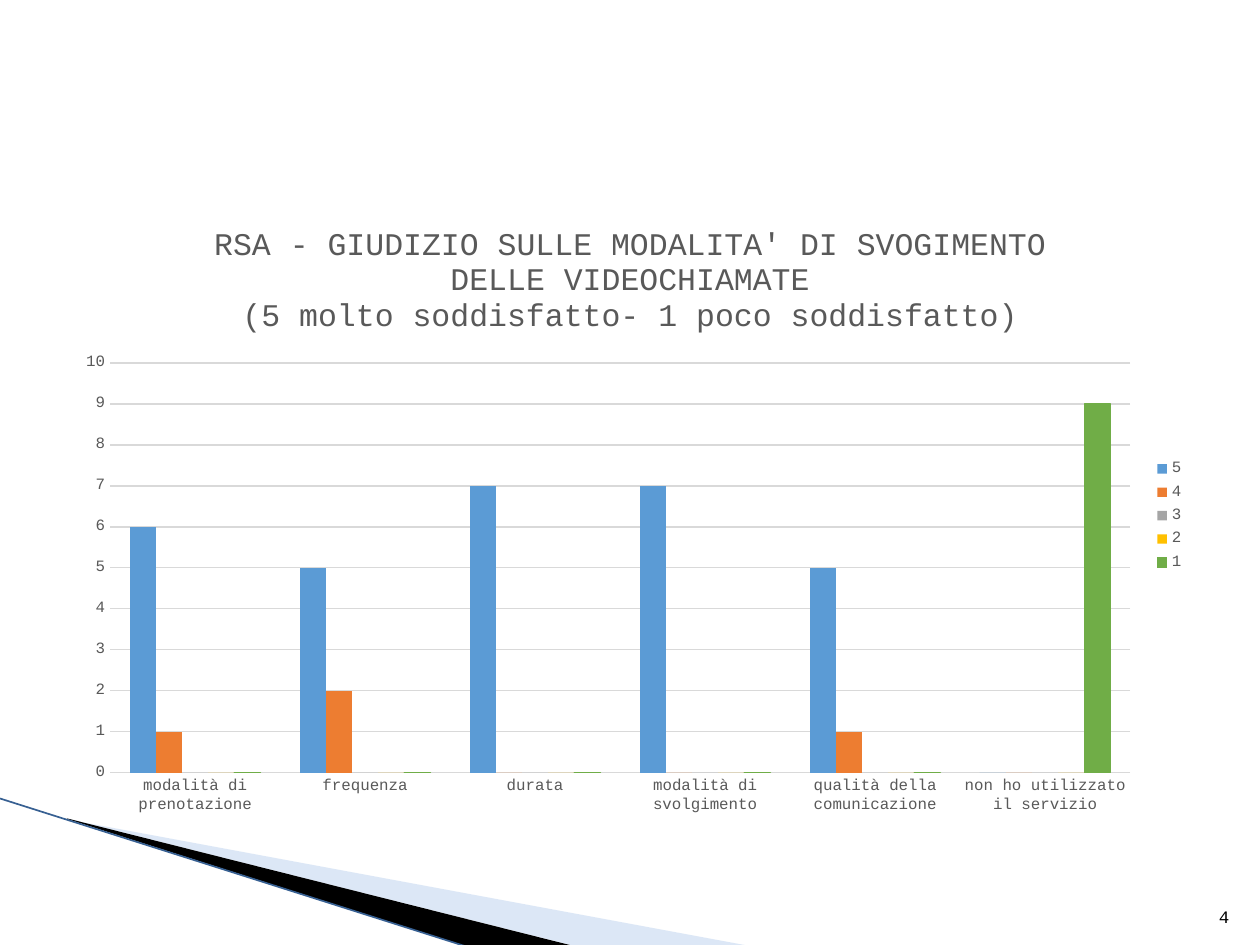
from dataclasses import dataclass

from lxml.etree import SubElement
from pptx import Presentation
from pptx.chart.data import CategoryChartData
from pptx.dml.color import RGBColor
from pptx.enum.chart import XL_CHART_TYPE as ChartType
from pptx.enum.chart import XL_LEGEND_POSITION as LegendPosition
from pptx.enum.chart import XL_TICK_MARK as TickMark
from pptx.enum.shapes import MSO_CONNECTOR as Connector
from pptx.enum.text import MSO_ANCHOR as Anchor
from pptx.enum.text import PP_ALIGN as Align
from pptx.oxml.ns import qn
from pptx.util import Cm, Pt


@dataclass(frozen=True)
class Theme:
    font: str = "Courier New"
    black: str = "000000"
    gray: str = "595959"
    grid: str = "D9D9D9"
    pale_blue: str = "A9C5E9"
    edge_blue: str = "376092"
    title_size: float = 18
    number_size: float = 10
    label_size: float = 9
    hairline: float = 0.75
    edge_width: float = 0.95


THEME = Theme()

WEDGE_GRID = (5760, 528)
PALE_WEDGE = [(-329, 347), (7156, 682), (5229, 682), (-328, 345)]
BLACK_WEDGE = [(817, 97), (6408, 682), (5232, 685), (829, 101)]

TITLE = [
    "RSA - GIUDIZIO SULLE MODALITA' DI SVOGIMENTO DELLE VIDEOCHIAMATE",
    "(5 molto soddisfatto- 1 poco soddisfatto)",
]
CATEGORIES = [
    "modalità di prenotazione",
    "frequenza",
    "durata",
    "modalità di svolgimento",
    "qualità della comunicazione",
    "non ho utilizzato il servizio",
]
RATINGS = [
    ("5", (6, 5, 7, 7, 5, 0), "5B9BD5"),
    ("4", (1, 2, 0, 0, 1, 0), "ED7D31"),
    ("3", (0, 0, 0, 0, 0, 0), "A5A5A5"),
    ("2", (0, 0, 0, 0, 0, 0), "FFC000"),
    ("1", (0, 0, 0, 0, 0, 9), "70AD47"),
]


def rgb(color):
    return RGBColor.from_string(color)


def style_font(font, size, color):
    font.name = THEME.font
    font.size = Pt(size)
    font.bold = False
    font.color.rgb = rgb(color)


def style_line(line, color, width):
    line.color.rgb = rgb(color)
    line.width = Pt(width)


def add_wedge(slide, frame, points, color, opacity=100):
    """Draw an outline on the wedge grid; its points may reach past the frame."""
    start, *rest = points
    builder = slide.shapes.build_freeform(*start)
    builder.add_line_segments(rest)
    shape = builder.convert_to_shape()
    shape.left, shape.top, shape.width, shape.height = (Cm(value) for value in frame)
    outline = shape._element.spPr.find(".//" + qn("a:path"))
    for name, value in zip("wh", WEDGE_GRID):
        outline.set(name, str(value))
    left, top = (min(values) for values in zip(*points))
    for point in outline.iter(qn("a:pt")):
        point.set("x", str(int(point.get("x")) + left))
        point.set("y", str(int(point.get("y")) + top))
    shape.shadow.inherit = False
    shape.fill.solid()
    shape.fill.fore_color.rgb = rgb(color)
    shape.line.fill.background()
    if opacity < 100:
        color_element = shape._element.spPr.find(".//" + qn("a:srgbClr"))
        SubElement(color_element, qn("a:alpha"), val=str(opacity * 1000))


def add_edge(slide, start, end):
    connector = slide.shapes.add_connector(
        Connector.STRAIGHT, *(Cm(value) for value in start + end)
    )
    style_line(connector.line, THEME.edge_blue, THEME.edge_width)
    SubElement(connector._element.spPr, qn("a:effectLst"))


def add_slide_number(slide, text):
    box = slide.shapes.add_textbox(Cm(24.01), Cm(17.79), Cm(1.02), Cm(1.02))
    frame = box.text_frame
    frame.word_wrap = True
    frame.vertical_anchor = Anchor.BOTTOM
    paragraph = frame.paragraphs[0]
    paragraph.alignment = Align.RIGHT
    run = paragraph.add_run()
    run.text = text
    style_font(run.font, THEME.number_size, THEME.black)


def set_title(chart):
    frame = chart.chart_title.text_frame
    for index, text in enumerate(TITLE):
        paragraph = frame.add_paragraph() if index else frame.paragraphs[0]
        run = paragraph.add_run()
        run.text = text
        style_font(run.font, THEME.title_size, THEME.gray)
    chart.chart_title.include_in_layout = False


def style_axes(chart):
    for axis in (chart.category_axis, chart.value_axis):
        axis.major_tick_mark = axis.minor_tick_mark = TickMark.NONE
        axis.format.line.fill.background()
        style_font(axis.tick_labels.font, THEME.label_size, THEME.gray)
    axis = chart.value_axis
    axis.minimum_scale, axis.maximum_scale, axis.major_unit = 0, 10, 1
    style_line(axis.major_gridlines.format.line, THEME.grid, THEME.hairline)


def place_plot(chart, **percentages):
    """Fix the inner plot area as percentages of the chart frame."""
    plot_area = chart._chartSpace.chart.plotArea
    layout = plot_area.find(qn("c:layout"))
    if layout is None:
        layout = SubElement(plot_area, qn("c:layout"))
        plot_area.insert(0, layout)
    manual = SubElement(layout, qn("c:manualLayout"))
    for name, value in (("layoutTarget", "inner"), ("xMode", "edge"), ("yMode", "edge")):
        SubElement(manual, qn("c:" + name), val=value)
    for name, value in percentages.items():
        SubElement(manual, qn("c:" + name), val=str(value / 100))


def add_ratings_chart(slide):
    data = CategoryChartData()
    data.categories = CATEGORIES
    for name, values, _ in RATINGS:
        data.add_series(name, values)
    chart = slide.shapes.add_chart(
        ChartType.COLUMN_CLUSTERED, Cm(1.27), Cm(4.11), Cm(22.86), Cm(12.57), data
    ).chart
    style_font(chart.font, THEME.number_size, THEME.black)
    set_title(chart)
    style_axes(chart)
    place_plot(chart, x=4.15, y=25.52, w=89.95, h=65.74)

    chart.has_legend = True
    chart.legend.position = LegendPosition.RIGHT
    chart.legend.include_in_layout = False
    style_font(chart.legend.font, THEME.label_size, THEME.gray)

    plot = chart.plots[0]
    plot.gap_width = 150
    plot.overlap = 0
    plot.vary_by_categories = False
    for series, (_, _, color) in zip(plot.series, RATINGS):
        series.invert_if_negative = False
        series.format.fill.solid()
        series.format.fill.fore_color.rgb = rgb(color)
    style_line(series.format.line, color, THEME.hairline)


def main():
    presentation = Presentation()
    presentation.slide_width, presentation.slide_height = Cm(25.4), Cm(19.05)
    slide = presentation.slides.add_slide(presentation.slide_layouts[6])
    add_wedge(slide, (1.99, 13.89, 10.56, 4.01), PALE_WEDGE, THEME.pale_blue, 40)
    add_wedge(slide, (-0.15, 16.07, 10.56, 2.33), BLACK_WEDGE, THEME.black)
    add_edge(slide, (-0.02, 16.09), (9.43, 19.09))
    add_slide_number(slide, "4")
    add_ratings_chart(slide)
    presentation.save("out.pptx")


if __name__ == "__main__":
    main()
